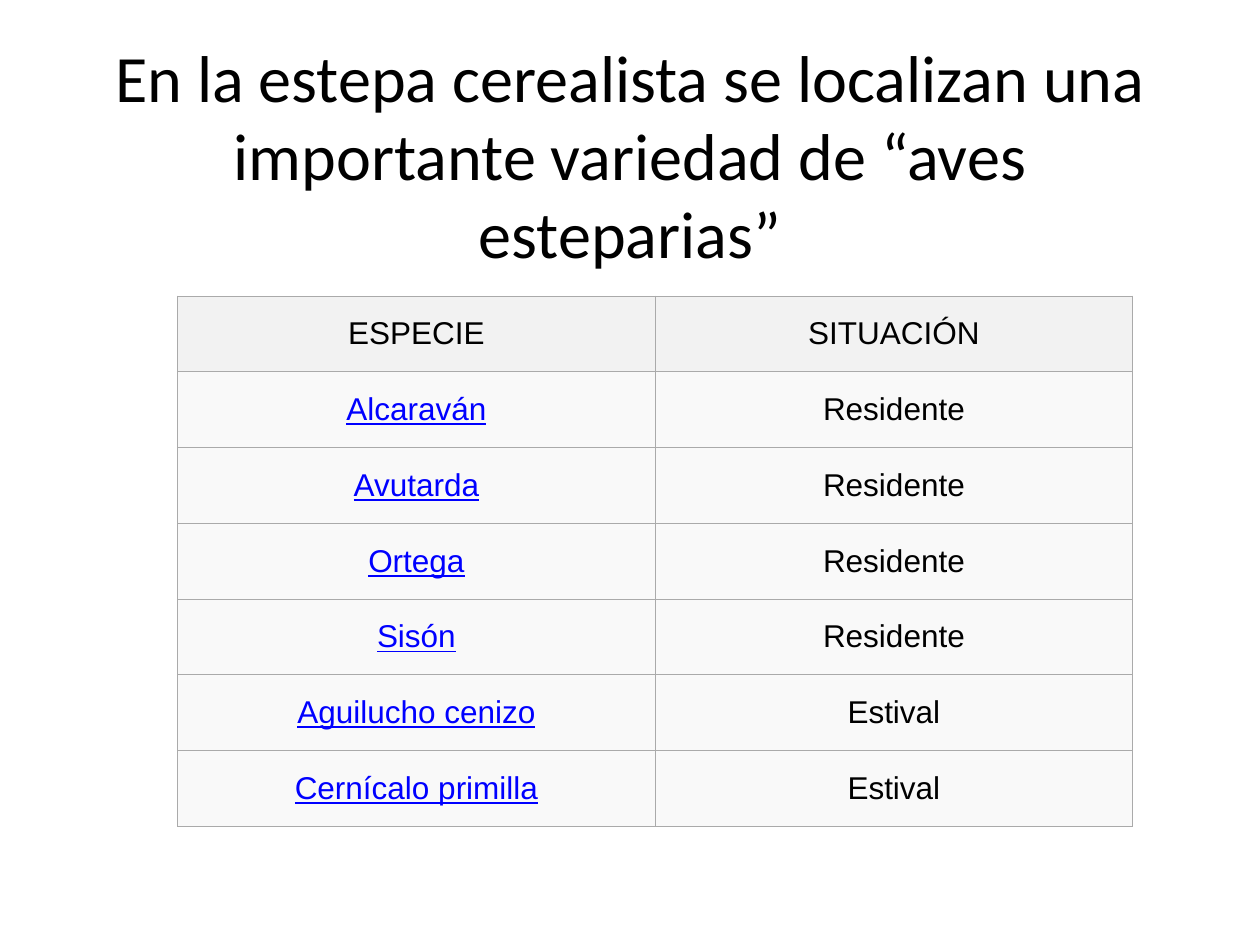
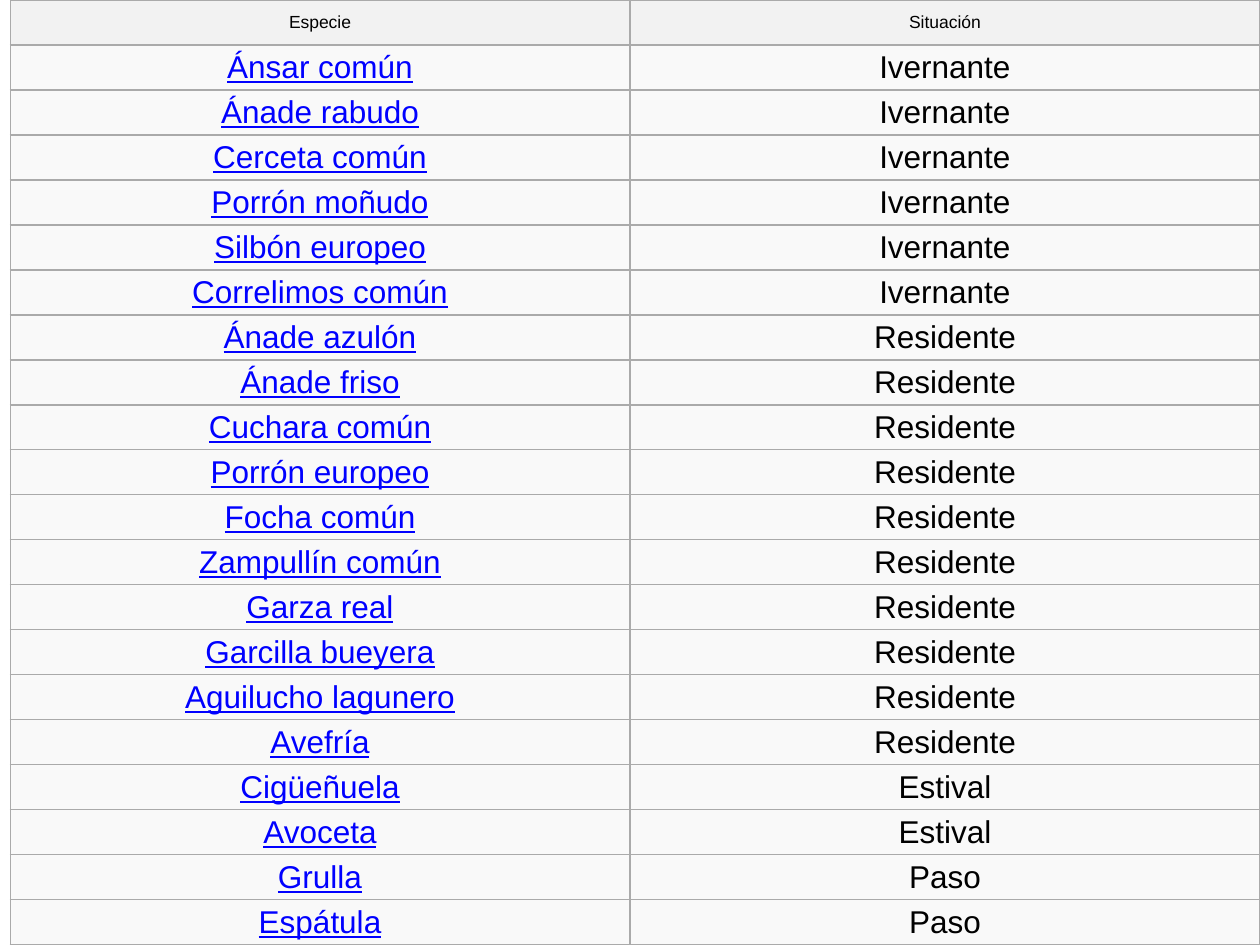
"""Two slides that list steppe and wetland birds with their seasonal status."""
from dataclasses import dataclass

from lxml import etree
from pptx import Presentation
from pptx import util as u
from pptx.dml.color import RGBColor
from pptx.enum import text
from pptx.oxml import ns


@dataclass(frozen=True)
class Theme:
    """Colours, fonts and type sizes shared by the slides."""
    ink: str = "000000"
    link: str = "0000FF"
    header_fill: str = "F2F2F2"
    body_fill: str = "F9F9F9"
    border: str = "AAAAAA"
    border_pt: float = 0.75
    title_font: str = "Calibri"
    table_font: str = "Arial"
    title_pt: float = 37.8
    body_pt: float = 18
    small_pt: float = 10


@dataclass(frozen=True)
class BirdTable:
    """A species table: place in inches, header, and species by status."""
    left: float
    top: float
    columns: tuple[float, float]
    height: float
    header: tuple[str, str]
    header_pt: float
    insets: tuple[float, float]
    groups: dict[str, list[str]]

    def rows(self) -> list[tuple[str, str]]:
        """Return one (species, status) pair for each bird."""
        return [(bird, status) for status, birds in self.groups.items() for bird in birds]


THEME = Theme()
WIDTH, HEIGHT = 10, 7.5
TITLE = "En la estepa cerealista se localizan una importante variedad de “aves esteparias”"

STEPPE = BirdTable(
    left=1.41, top=2.35, columns=(3.79, 3.79), height=4.21,
    header=("ESPECIE", "SITUACIÓN"), header_pt=THEME.body_pt, insets=(0.1, 0.05),
    groups={
        "Residente": ["Alcaraván", "Avutarda", "Ortega", "Sisón"],
        "Estival": ["Aguilucho cenizo", "Cernícalo primilla"],
    },
)
WETLAND = BirdTable(
    left=0.08, top=0, columns=(WIDTH / 2 - 0.08, WIDTH / 2), height=HEIGHT,
    header=("Especie", "Situación"), header_pt=THEME.small_pt, insets=(0.05, 0.03),
    groups={
        "Ivernante": ["Ánsar común", "Ánade rabudo", "Cerceta común", "Porrón moñudo",
                      "Silbón europeo", "Correlimos común"],
        "Residente": ["Ánade azulón", "Ánade friso", "Cuchara común", "Porrón europeo",
                      "Focha común", "Zampullín común", "Garza real", "Garcilla bueyera",
                      "Aguilucho lagunero", "Avefría"],
        "Estival": ["Cigüeñuela", "Avoceta"],
        "Paso": ["Grulla", "Espátula"],
    },
)


def write(frame, words: str, *, size: float, font: str = THEME.table_font,
          color: str = THEME.ink, underline: bool = False, spacing: float = 1.0) -> None:
    """Put one centred, formatted paragraph into a text frame."""
    paragraph = frame.paragraphs[0]
    paragraph.alignment = text.PP_ALIGN.CENTER
    paragraph.line_spacing = spacing
    run = paragraph.add_run()
    run.text = words
    run.font.size = u.Pt(size)
    run.font.name = font
    run.font.underline = underline
    run.font.color.rgb = RGBColor.from_string(color)


def set_insets(holder, across: float, down: float) -> None:
    """Set the inner margins of a cell or text frame and centre it vertically."""
    holder.margin_left = holder.margin_right = u.Inches(across)
    holder.margin_top = holder.margin_bottom = u.Inches(down)
    holder.vertical_anchor = text.MSO_ANCHOR.MIDDLE


def outline(cell) -> None:
    """Draw the four borders of a table cell."""
    properties = cell._tc.get_or_add_tcPr()
    for side in ("lnL", "lnR", "lnT", "lnB"):
        line = etree.SubElement(properties, ns.qn(f"a:{side}"), w=str(u.Pt(THEME.border_pt)))
        fill = etree.SubElement(line, ns.qn("a:solidFill"))
        etree.SubElement(fill, ns.qn("a:srgbClr"), val=THEME.border)


def add_bird_table(slide, birds: BirdTable) -> None:
    """Add a species table with a header row and underlined species names."""
    entries = [birds.header, *birds.rows()]
    frame = slide.shapes.add_table(
        len(entries), len(birds.columns), u.Inches(birds.left), u.Inches(birds.top),
        u.Inches(sum(birds.columns)), u.Inches(birds.height))
    table = frame.table
    table.first_row = table.horz_banding = False
    for column, width in zip(table.columns, birds.columns):
        column.width = u.Inches(width)
    for row, entry in enumerate(entries):
        is_header = row == 0
        for col, words in enumerate(entry):
            cell = table.cell(row, col)
            is_species = col == 0 and not is_header
            set_insets(cell, *birds.insets)
            outline(cell)
            cell.fill.solid()
            cell.fill.fore_color.rgb = RGBColor.from_string(
                THEME.header_fill if is_header else THEME.body_fill)
            write(cell.text_frame, words, underline=is_species,
                  size=birds.header_pt if is_header else THEME.body_pt,
                  color=THEME.link if is_species else THEME.ink)


def add_title(slide, words: str) -> None:
    """Move the title placeholder into place and fill it."""
    title = slide.shapes.title
    title.left, title.top = u.Inches(0.5), u.Inches(0.31)
    title.width, title.height = u.Inches(WIDTH - 1), u.Inches(1.88)
    frame = title.text_frame
    frame.word_wrap = True
    frame.auto_size = text.MSO_AUTO_SIZE.NONE
    set_insets(frame, 0.15, 0)
    write(frame, words, size=THEME.title_pt, font=THEME.title_font, spacing=0.98)


def main() -> None:
    """Build both slides and save the presentation."""
    deck = Presentation()
    deck.slide_width, deck.slide_height = u.Inches(WIDTH), u.Inches(HEIGHT)
    title_only, blank = deck.slide_layouts[5], deck.slide_layouts[6]
    steppe_slide = deck.slides.add_slide(title_only)
    add_title(steppe_slide, TITLE)
    add_bird_table(steppe_slide, STEPPE)
    add_bird_table(deck.slides.add_slide(blank), WETLAND)
    deck.save("out.pptx")


if __name__ == "__main__":
    main()
